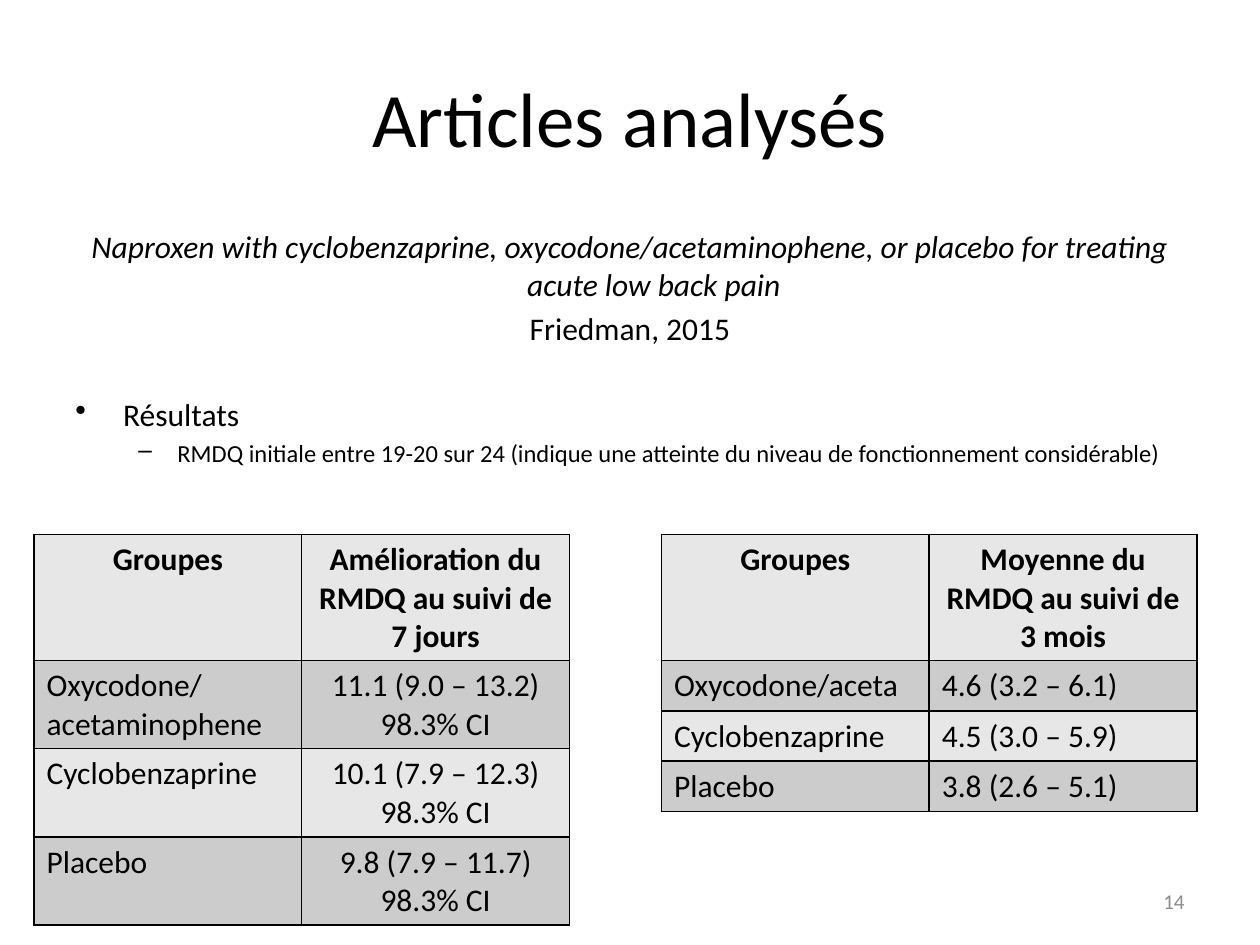
"""Build the slide of results for the Friedman 2015 article."""
import dataclasses
import typing

import lxml.etree
import pptx
import pptx.dml.color
import pptx.enum.text
import pptx.oxml.ns
import pptx.slide
import pptx.text.text
import pptx.util

Inches = pptx.util.Inches
Pt = pptx.util.Pt
Align = pptx.enum.text.PP_ALIGN
Anchor = pptx.enum.text.MSO_ANCHOR


@dataclasses.dataclass(frozen=True)
class Theme:
    font: str = "Calibri"
    ink: str = "000000"
    muted: str = "8C8C8C"
    light_row: str = "E7E7E7"
    dark_row: str = "CCCCCC"
    title: float = 44
    body: float = 18
    detail: float = 14
    footer: float = 12
    border: float = 1


THEME = Theme()


@dataclasses.dataclass(frozen=True)
class Line:
    text: str
    size: float = THEME.body
    color: str = THEME.ink
    align: Align = Align.LEFT
    italic: bool = False
    bold: bool = False
    bullet: str = ""
    level: int = 0
    margin: float = 0
    hanging: float = 0
    before: float = 0


@dataclasses.dataclass(frozen=True)
class TextArea:
    left: float
    top: float
    width: float
    height: float
    lines: tuple[Line, ...]
    anchor: Anchor = Anchor.TOP


@dataclasses.dataclass(frozen=True)
class ResultTable:
    left: float
    row_height: float
    value_align: Align
    rows: tuple[tuple[str, str], ...]


TABLE_TOP = 4.24
TABLE_WIDTH = 4.25
HEADER_HEIGHT = 1.0

AREAS = (
    TextArea(0.5, 0.3, 9, 1.25,
             (Line("Articles analysés", THEME.title, align=Align.CENTER),),
             Anchor.MIDDLE),
    TextArea(0.5, 1.75, 9, 4.95, (
        Line("Naproxen with cyclobenzaprine, oxycodone/acetaminophene, "
             "or placebo for treating acute low back pain",
             align=Align.CENTER, italic=True, margin=0.38, hanging=0.38),
        Line("Friedman, 2015", align=Align.CENTER,
             margin=0.38, hanging=0.38, before=3.6),
        Line("Résultats", bullet="•", margin=0.38, hanging=0.38, before=28),
        Line("RMDQ initiale entre 19-20 sur 24 (indique une atteinte "
             "du niveau de fonctionnement considérable)", THEME.detail,
             bullet="–", level=1, margin=0.81, hanging=0.31, before=2.8),
    )),
    TextArea(7.17, 6.95, 2.33, 0.4,
             (Line("14", THEME.footer, THEME.muted, Align.RIGHT),),
             Anchor.MIDDLE),
)

TABLES = (
    ResultTable(0.27, 0.7, Align.CENTER, (
        ("Groupes", "Amélioration du RMDQ au suivi de 7 jours"),
        ("Oxycodone/acetaminophene", "11.1 (9.0 – 13.2) 98.3% CI"),
        ("Cyclobenzaprine", "10.1 (7.9 – 12.3) 98.3% CI"),
        ("Placebo", "9.8 (7.9 – 11.7) 98.3% CI"),
    )),
    ResultTable(5.25, 0.4, Align.LEFT, (
        ("Groupes", "Moyenne du RMDQ au suivi de 3 mois"),
        ("Oxycodone/aceta", "4.6 (3.2 – 6.1)"),
        ("Cyclobenzaprine", "4.5 (3.0 – 5.9)"),
        ("Placebo", "3.8 (2.6 – 5.1)"),
    )),
)


def rgb(color: str) -> pptx.dml.color.RGBColor:
    return pptx.dml.color.RGBColor.from_string(color)


def write_line(paragraph: pptx.text.text._Paragraph, line: Line) -> None:
    paragraph.text = line.text
    paragraph.alignment = line.align
    paragraph.level = line.level
    if line.before:
        paragraph.space_before = Pt(line.before)
    properties = paragraph._p.get_or_add_pPr()
    if line.margin:
        properties.set("marL", str(Inches(line.margin)))
        properties.set("indent", str(-Inches(line.hanging)))
    if line.bullet:
        bullet = lxml.etree.SubElement(properties, pptx.oxml.ns.qn("a:buChar"))
        bullet.set("char", line.bullet)
    for run in paragraph.runs:
        run.font.name = THEME.font
        run.font.size = Pt(line.size)
        run.font.bold = line.bold
        run.font.italic = line.italic
        run.font.color.rgb = rgb(line.color)


def draw_area(slide: pptx.slide.Slide, area: TextArea) -> None:
    box = slide.shapes.add_textbox(Inches(area.left), Inches(area.top),
                                   Inches(area.width), Inches(area.height))
    frame = box.text_frame
    frame.word_wrap = True
    frame.vertical_anchor = area.anchor
    for index, line in enumerate(area.lines):
        paragraph = frame.add_paragraph() if index else frame.paragraphs[0]
        write_line(paragraph, line)


def add_borders(cell: typing.Any) -> None:
    properties = cell._tc.get_or_add_tcPr()
    for index, side in enumerate(("a:lnL", "a:lnR", "a:lnT", "a:lnB")):
        border = lxml.etree.Element(pptx.oxml.ns.qn(side), w=str(Pt(THEME.border)))
        fill = lxml.etree.SubElement(border, pptx.oxml.ns.qn("a:solidFill"))
        lxml.etree.SubElement(fill, pptx.oxml.ns.qn("a:srgbClr"), val=THEME.ink)
        properties.insert(index, border)


def draw_table(slide: pptx.slide.Slide, results: ResultTable) -> None:
    heights = [HEADER_HEIGHT] + [results.row_height] * (len(results.rows) - 1)
    table = slide.shapes.add_table(
        len(results.rows), 2, Inches(results.left), Inches(TABLE_TOP),
        Inches(TABLE_WIDTH), Inches(sum(heights))).table
    for row, (texts, height) in enumerate(zip(results.rows, heights)):
        table.rows[row].height = Inches(height)
        header = row == 0
        aligns = (Align.CENTER,) * 2 if header else (Align.LEFT, results.value_align)
        for column, (text, align) in enumerate(zip(texts, aligns)):
            cell = table.cell(row, column)
            cell.fill.solid()
            cell.fill.fore_color.rgb = rgb(THEME.dark_row if row % 2 else THEME.light_row)
            add_borders(cell)
            write_line(cell.text_frame.paragraphs[0],
                       Line(text, align=align, bold=header))


def main() -> None:
    presentation = pptx.Presentation()
    presentation.slide_width = Inches(10)
    presentation.slide_height = Inches(7.5)
    slide = presentation.slides.add_slide(presentation.slide_layouts[6])
    for area in AREAS:
        draw_area(slide, area)
    for results in TABLES:
        draw_table(slide, results)
    presentation.save("out.pptx")


if __name__ == "__main__":
    main()
